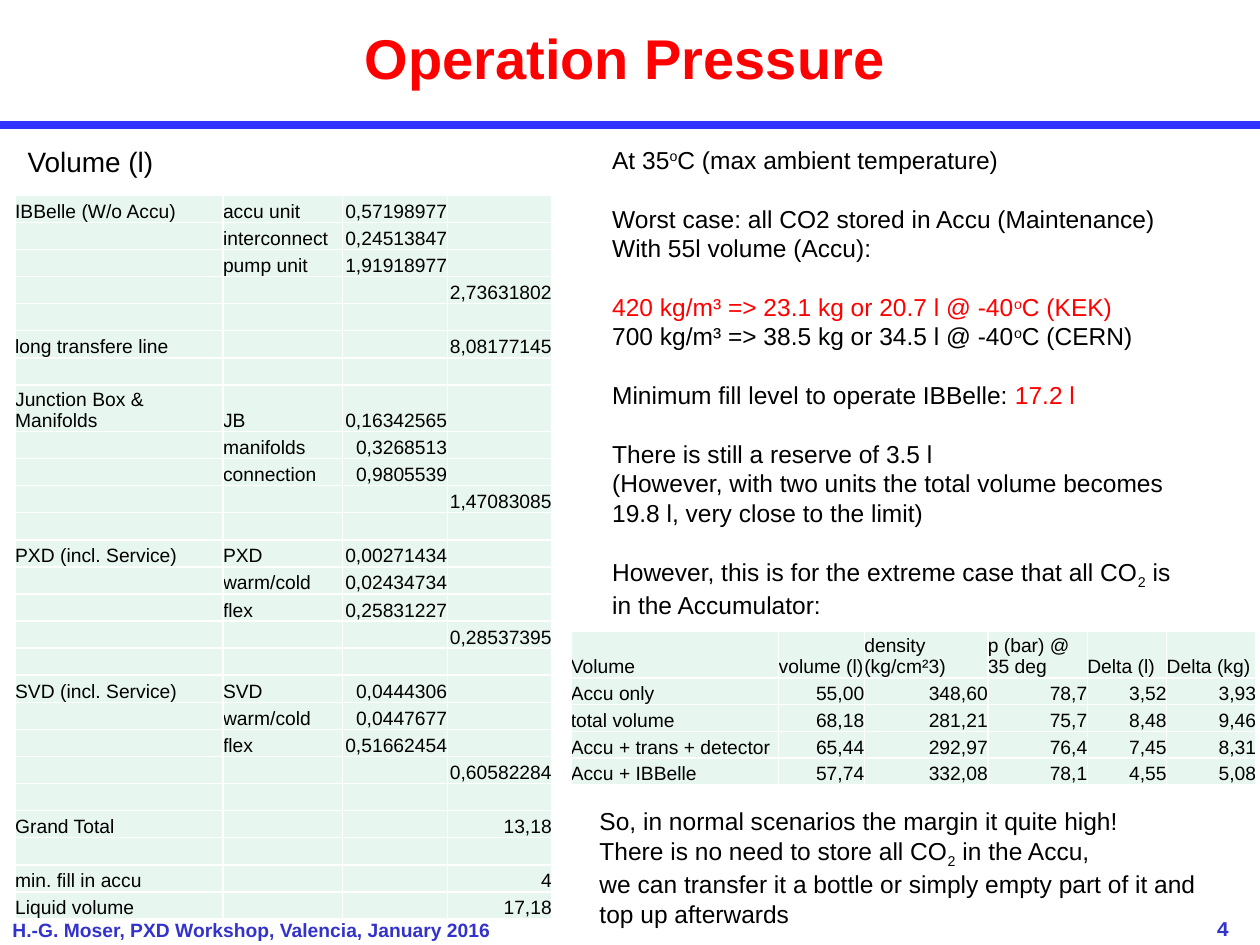
from lxml import etree
from pptx import Presentation
from pptx.dml.color import RGBColor
from pptx.enum import shapes, text
from pptx.oxml import ns
from pptx.util import Inches, Pt

RED = RGBColor(0xFF, 0x00, 0x00)
BLACK = RGBColor(0x00, 0x00, 0x00)
RULE_BLUE = RGBColor(0x33, 0x33, 0xFF)
FOOTER_BLUE = RGBColor(0x33, 0x33, 0xCC)
MINT = RGBColor(0xE7, 0xF6, 0xEF)
BORDER = "FFFFFF"
SUPER, SUB = 30000, -25000
BLOCK_GAP = Pt(16.8)
ROW_2_LINES = 0.37


def add_text(left, top, width, height, paragraphs, size, color=BLACK,
             bold=False, font="Arial", wrap=True):
    """Each paragraph is (starts a block, runs); a run is (text, colour, baseline)."""
    frame = slide.shapes.add_textbox(
        Inches(left), Inches(top), Inches(width), Inches(height)).text_frame
    frame.word_wrap = wrap
    for i, (new_block, runs) in enumerate(paragraphs):
        line = frame.paragraphs[0] if i == 0 else frame.add_paragraph()
        if new_block:
            line.space_before = BLOCK_GAP
        for words, run_color, baseline in runs:
            run = line.add_run()
            run.text = words
            run.font.size, run.font.name, run.font.bold = Pt(size), font, bold
            run.font.color.rgb = run_color or color
            if baseline:
                run.font._element.set("baseline", str(baseline))
    return frame


def add_grid(left, top, height, widths, rows, tall_row):
    """Table with one two-line row; the other rows share the remaining height."""
    table = slide.shapes.add_table(
        len(rows), len(widths), Inches(left), Inches(top),
        Inches(sum(widths)), Inches(height)).table
    table.first_row = table.horz_banding = False
    for column, width in zip(table.columns, widths):
        column.width = Inches(width)
    row_height = (height - ROW_2_LINES) / (len(rows) - 1)
    for r, values in enumerate(rows):
        table.rows[r].height = Inches(ROW_2_LINES if r == tall_row else row_height)
        for c, value in enumerate(values):
            cell = table.cell(r, c)
            cell.margin_left = cell.margin_right = 0
            cell.margin_top = cell.margin_bottom = 0
            cell.vertical_anchor = text.MSO_ANCHOR.BOTTOM
            line = cell.text_frame.paragraphs[0]
            line.text = value
            line.font.size = Pt(11)
            for run in line.runs:
                run.font.size, run.font.name = Pt(11), "Arial"
                run.font.color.rgb = BLACK
            if not value:
                end = etree.SubElement(line._p, ns.qn("a:endParaRPr"))
                end.set("sz", "1100")
            if value[:1].isdigit():
                line.alignment = text.PP_ALIGN.RIGHT
            # White borders precede the fill in the cell properties
            cell_props = cell._tc.get_or_add_tcPr()
            for side in ("lnL", "lnR", "lnT", "lnB"):
                border = etree.SubElement(cell_props, ns.qn("a:" + side), w="12700")
                fill = etree.SubElement(border, ns.qn("a:solidFill"))
                etree.SubElement(fill, ns.qn("a:srgbClr"), val=BORDER)
            cell.fill.solid()
            cell.fill.fore_color.rgb = MINT


def plain(words, new_block=False):
    return new_block, [(words, None, 0)]


prs = Presentation()
prs.slide_width, prs.slide_height = Inches(10), Inches(7.5)
slide = prs.slides.add_slide(prs.slide_layouts[6])

# Rule under the title
rule = slide.shapes.add_connector(
    shapes.MSO_CONNECTOR.STRAIGHT, Inches(0), Inches(0.99), Inches(10), Inches(0.99))
rule.line.color.rgb = RULE_BLUE
rule.line.width = Pt(4.5)
etree.SubElement(rule._element.spPr, ns.qn("a:effectLst"))

# Footer and page number
add_text(0, 7.24, 4.08, 0.29, [plain("H.-G. Moser, PXD Workshop, Valencia, January 2016")],
         11, FOOTER_BLUE, bold=True, wrap=False)
page = add_text(9.41, 7.22, 0.59, 0.28, [plain("4")], 12, FOOTER_BLUE,
                bold=True, font="Courier New")
page.paragraphs[0].alignment = text.PP_ALIGN.CENTER

# Title
title = add_text(1.06, 0, 7.8, 0.91, [plain("Operation Pressure")], 32, RED, bold=True)
title.vertical_anchor = text.MSO_ANCHOR.MIDDLE
title.paragraphs[0].alignment = text.PP_ALIGN.CENTER

# Worst-case argument
add_text(4.76, 1.1, 4.72, 4.81, [
    (False, [("At 35", None, 0), ("o", None, SUPER), ("C (max ambient temperature)", None, 0)]),
    plain("Worst case: all CO2 stored in Accu (Maintenance)", True),
    plain("With 55l volume (Accu):"),
    (True, [("420 kg/m³ => 23.1 kg or 20.7 l @ -40", RED, 0), ("o", RED, SUPER),
            ("C (KEK)", RED, 0)]),
    (False, [("700 kg/m³ => 38.5 kg or 34.5 l @ -40", None, 0), ("o", None, SUPER),
             ("C (CERN)", None, 0)]),
    (True, [("Minimum fill level to operate IBBelle: ", None, 0), ("17.2 l", RED, 0)]),
    plain("There is still a reserve of 3.5 l", True),
    plain("(However, with two units the total volume becomes 19.8 l, very close to the limit)"),
    (True, [("However, this is for the extreme case that all CO", None, 0), ("2", None, SUB),
            (" is in the Accumulator:", None, 0)]),
], 14)

# Volume table
add_text(0.12, 1.1, 1.21, 0.37, [plain("Volume (l)")], 16, wrap=False)
spacer = ("", "", "", "")
volumes = [
    ("IBBelle (W/o Accu)", "accu unit", "0,57198977", ""),
    ("", "interconnect", "0,24513847", ""),
    ("", "pump unit", "1,91918977", ""),
    ("", "", "", "2,73631802"),
    spacer,
    ("long transfere line", "", "", "8,08177145"),
    spacer,
    ("Junction Box & Manifolds", "JB", "0,16342565", ""),
    ("", "manifolds", "0,3268513", ""),
    ("", "connection", "0,9805539", ""),
    ("", "", "", "1,47083085"),
    spacer,
    ("PXD (incl. Service)", "PXD", "0,00271434", ""),
    ("", "warm/cold", "0,02434734", ""),
    ("", "flex", "0,25831227", ""),
    ("", "", "", "0,28537395"),
    spacer,
    ("SVD (incl. Service)", "SVD", "0,0444306", ""),
    ("", "warm/cold", "0,0447677", ""),
    ("", "flex", "0,51662454", ""),
    ("", "", "", "0,60582284"),
    spacer,
    ("Grand Total", "", "", "13,18"),
    spacer,
    ("min. fill in accu", "", "", "4"),
    ("Liquid volume", "", "", "17,18"),
]
add_grid(0.12, 1.55, 5.75, [1.65, 0.95, 0.83, 0.83], volumes, tall_row=7)

# Pressure table
pressures = [
    ("Volume", "volume (l)", "density (kg/cm²3)", "p (bar) @ 35 deg", "Delta (l)", "Delta (kg)"),
    ("Accu only", "55,00", "348,60", "78,7", "3,52", "3,93"),
    ("total volume", "68,18", "281,21", "75,7", "8,48", "9,46"),
    ("Accu + trans + detector", "65,44", "292,97", "76,4", "7,45", "8,31"),
    ("Accu + IBBelle", "57,74", "332,08", "78,1", "4,55", "5,08"),
]
add_grid(4.53, 5.01, 1.22, [1.65, 0.68, 0.98, 0.79, 0.63, 0.71], pressures, tall_row=0)

# Conclusion
add_text(4.66, 6.35, 5.23, 1.04, [
    plain("So, in normal scenarios the margin it quite high!"),
    (False, [("There is no need to store all CO", None, 0), ("2", None, SUB),
             (" in the Accu,", None, 0)]),
    plain("we can transfer it a bottle or simply empty part of it and top up afterwards"),
], 14)

prs.save("out.pptx")
